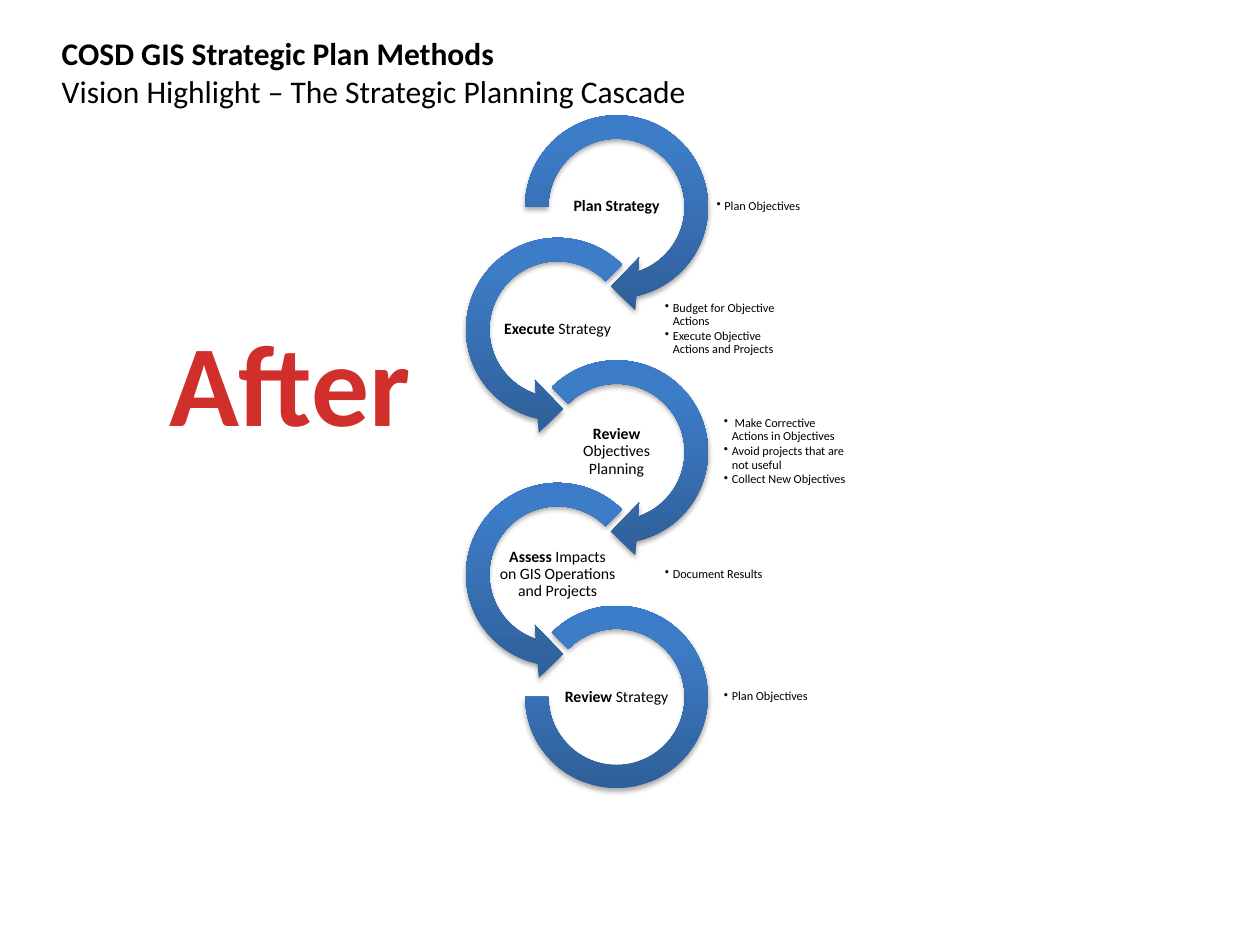
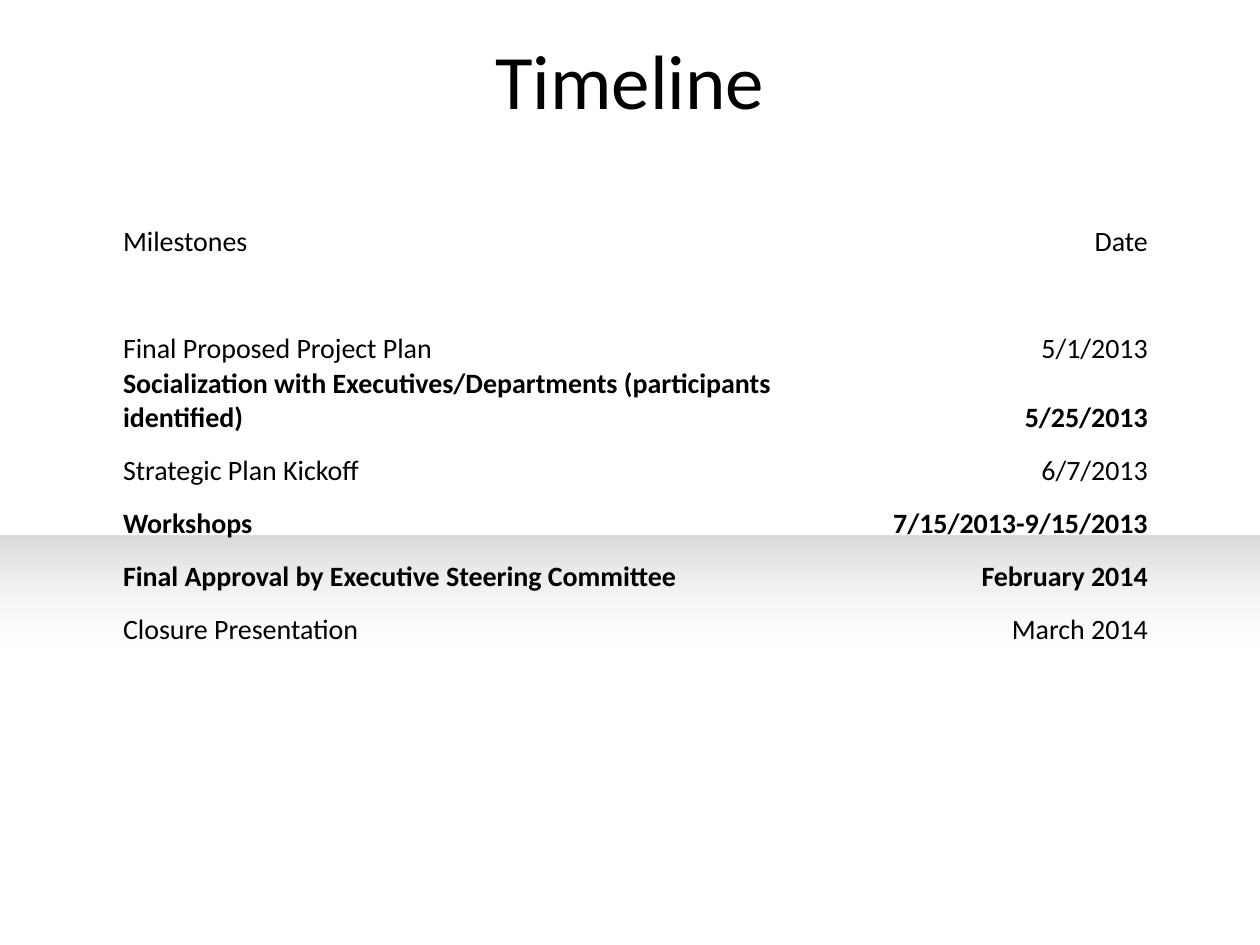
from lxml import etree
from pptx import Presentation
from pptx.dml.color import RGBColor
from pptx.enum.shapes import MSO_SHAPE
from pptx.enum.text import MSO_ANCHOR, MSO_AUTO_SIZE, PP_ALIGN
from pptx.oxml.ns import qn
from pptx.util import Cm, Pt

LEFT, CENTER, RIGHT = PP_ALIGN.LEFT, PP_ALIGN.CENTER, PP_ALIGN.RIGHT
TOP, MIDDLE, BOTTOM = MSO_ANCHOR.TOP, MSO_ANCHOR.MIDDLE, MSO_ANCHOR.BOTTOM
NO_FIT = MSO_AUTO_SIZE.NONE
CLOCK = MSO_SHAPE.CIRCULAR_ARROW
COUNTER = MSO_SHAPE.LEFT_CIRCULAR_ARROW
ARC, BOX = MSO_SHAPE.BLOCK_ARC, MSO_SHAPE.RECTANGLE

FONT = "Calibri"
BLACK = RGBColor(0x00, 0x00, 0x00)
WHITE = RGBColor(0xFF, 0xFF, 0xFF)
GRAY = RGBColor(0xD9, 0xD9, 0xD9)
RED = RGBColor(0xD0, 0x2F, 0x2C)
DEEP = RGBColor(0x2F, 0x5F, 0x99)
BLUE = RGBColor(0x3D, 0x7C, 0xC7)
SKY = RGBColor(0x3A, 0x7C, 0xCB)
RING_FADE = [(0, DEEP, 100), (80, BLUE, 100), (100, SKY, 100)]
BAND_FADE = [(61, WHITE, 0), (100, GRAY, 100)]
PLAIN_GRID = "{2D5ABB26-0587-4C30-8999-92F81FD0307C}"

HEAD = [
    [("COSD GIS Strategic Plan Methods", True)],
    [("Vision Highlight – The Strategic Planning Cascade", False)],
]
STEPS = [
    {"kind": CLOCK, "bend": (0.11, 11.423, 45, 108, 0.125), "shift": -0.15,
     "label": [("Plan Strategy", True)],
     "points": ["Plan Objectives"]},
    {"kind": COUNTER, "bend": (0.11, 11.423, 63, 189, 0.125),
     "label": [("Execute ", True), ("Strategy", False)],
     "points": ["Budget for Objective Actions",
                "Execute Objective Actions and Projects"]},
    {"kind": CLOCK, "bend": (0.11, 11.423, 45, 135, 0.125),
     "label": [("Review", True), (" Objectives Planning", False)],
     "points": [" Make Corrective Actions in Objectives",
                "Avoid projects that are not useful",
                "Collect New Objectives"]},
    {"kind": COUNTER, "bend": (0.11, 11.423, 63, 189, 0.125),
     "label": [("Assess", True),
               (" Impacts on GIS Operations and Projects", False)],
     "points": ["Document Results"]},
    {"kind": ARC, "bend": (135, 108, 0.127), "size": 3.68,
     "label": [("Review ", True), ("Strategy", False)],
     "points": ["Plan Objectives"]},
]
DATES = [
    ("Milestones", "Date", False),
    None,
    ("Final Proposed Project Plan", "5/1/2013", False),
    ("Socialization with Executives/Departments (participants identified)",
     "5/25/2013", True),
    ("Strategic Plan Kickoff", "6/7/2013", False),
    ("Workshops", "7/15/2013-9/15/2013", True),
    ("Final Approval by Executive Steering Committee", " February 2014", True),
    ("Closure Presentation", "March 2014", False),
    None,
]

RING = 4.29
STEP_Y = 2.47
FIRST_Y = 4.17
RING_X = (12.43, 11.24)
LABEL = (2.39, 1.19)
NOTE = (2.57, 1.7)
COLS = (15.39, 5.31)
ROW = 1.07
INSET = Cm(0.02)


def write(frame, paras, size, color=BLACK, align=LEFT, space=1.0, after=0,
          bullet=False):
    for i, runs in enumerate(paras):
        para = frame.add_paragraph() if i else frame.paragraphs[0]
        para.alignment = align
        para.line_spacing = space
        para.space_after = Pt(after)
        if bullet:
            props = para._p.get_or_add_pPr()
            props.set("marL", str(Cm(0.16)))
            props.set("indent", str(-Cm(0.16)))
            etree.SubElement(props, qn("a:buChar"), char="•")
        for text, bold in runs:
            run = para.add_run()
            run.text = text
            run.font.name = FONT
            run.font.size = Pt(size)
            run.font.bold = bold
            run.font.color.rgb = color


def place(shape, left, top, width, height):
    shape.left, shape.top = Cm(left), Cm(top)
    shape.width, shape.height = Cm(width), Cm(height)


def title(slide, paras, spot, anchor, **style):
    shape = slide.shapes.title
    place(shape, *spot)
    frame = shape.text_frame
    frame.auto_size = NO_FIT
    frame.vertical_anchor = anchor
    write(frame, paras, **style)


def center(x, y, width, height):
    return [Cm(v) for v in (x - width / 2, y - height / 2, width, height)]


def note(shapes, spot, paras, **style):
    frame = shapes.add_textbox(*spot).text_frame
    frame.word_wrap = True
    frame.vertical_anchor = MIDDLE
    frame.margin_left = frame.margin_right = INSET
    frame.margin_top = frame.margin_bottom = INSET
    write(frame, paras, **style)


def fade(shape, stops):
    shape.fill.gradient()
    shape.fill.gradient_angle = 90
    shape.line.fill.background()
    shape.shadow.inherit = False
    items = shape._element.spPr.find(qn("a:gradFill")).find(qn("a:gsLst"))
    for old in list(items):
        items.remove(old)
    for pos, color, alpha in stops:
        stop = etree.SubElement(items, qn("a:gs"), pos=str(pos * 1000))
        tint = etree.SubElement(stop, qn("a:srgbClr"), val=str(color))
        etree.SubElement(tint, qn("a:alpha"), val=str(alpha * 1000))


def shade(shape):
    effects = shape._element.spPr.find(qn("a:effectLst"))
    outer = etree.SubElement(effects, qn("a:outerShdw"), blurRad=str(Pt(3.1)),
                             dist=str(Pt(1.8)), dir="5400000", rotWithShape="0")
    tint = etree.SubElement(outer, qn("a:srgbClr"), val=str(BLACK))
    etree.SubElement(tint, qn("a:alpha"), val="35000")


def cascade(deck):
    slide = deck.slides.add_slide(deck.slide_layouts[5])
    title(slide, HEAD, (0.99, 0.56, 14.45, 1.8), TOP, size=18)
    shapes = slide.shapes.add_group_shape().shapes
    for i, step in enumerate(STEPS):
        x, y = RING_X[i % 2], FIRST_Y + i * STEP_Y
        size = step.get("size", RING)
        ring = shapes.add_shape(step["kind"], *center(x, y, size, size))
        for k, value in enumerate(step["bend"]):
            ring.adjustments[k] = value
        fade(ring, RING_FADE)
        shade(ring)
        edge = x + RING / 2 + step.get("shift", 0)
        note(shapes, center(edge + NOTE[0] / 2, y, *NOTE),
             [[(text, False)] for text in step["points"]],
             size=7, space=0.9, after=1, bullet=True)
        note(shapes, center(x, y, *LABEL), [step["label"]],
             size=9, space=0.9, align=CENTER)
    after = slide.shapes.add_textbox(Cm(3.16), Cm(6.15), Cm(5.66), Cm(3.07))
    write(after.text_frame, [[("After", True)]], size=66, color=RED)


def dates(deck):
    slide = deck.slides.add_slide(deck.slide_layouts[5])
    title(slide, [[("Timeline", False)]], (1.27, 0, 22.86, 3.18), MIDDLE,
          size=44, align=CENTER)
    band = slide.shapes.add_shape(BOX, 0, Cm(10.79), deck.slide_width, Cm(6.6))
    fade(band, BAND_FADE)
    grid = slide.shapes.add_table(len(DATES), len(COLS), Cm(2.46), Cm(4.16),
                                  Cm(sum(COLS)), Cm(ROW * len(DATES))).table
    grid.first_row = grid.horz_banding = False
    grid._tbl.tblPr.find(qn("a:tableStyleId")).text = PLAIN_GRID
    for col, width in zip(grid.columns, COLS):
        col.width = Cm(width)
    for row, entry in zip(grid.rows, DATES):
        row.height = Cm(ROW)
        for k, cell in enumerate(row.cells):
            cell.fill.background()
            cell.vertical_anchor = BOTTOM
            cell.margin_left = cell.margin_right = cell.margin_top = INSET
            cell.margin_bottom = 0
            if entry:
                write(cell.text_frame, [[(entry[k], entry[2])]], size=16,
                      align=(LEFT, RIGHT)[k])


def main():
    deck = Presentation()
    deck.slide_width, deck.slide_height = Cm(25.4), Cm(19.05)
    cascade(deck)
    dates(deck)
    deck.save("out.pptx")


if __name__ == "__main__":
    main()
